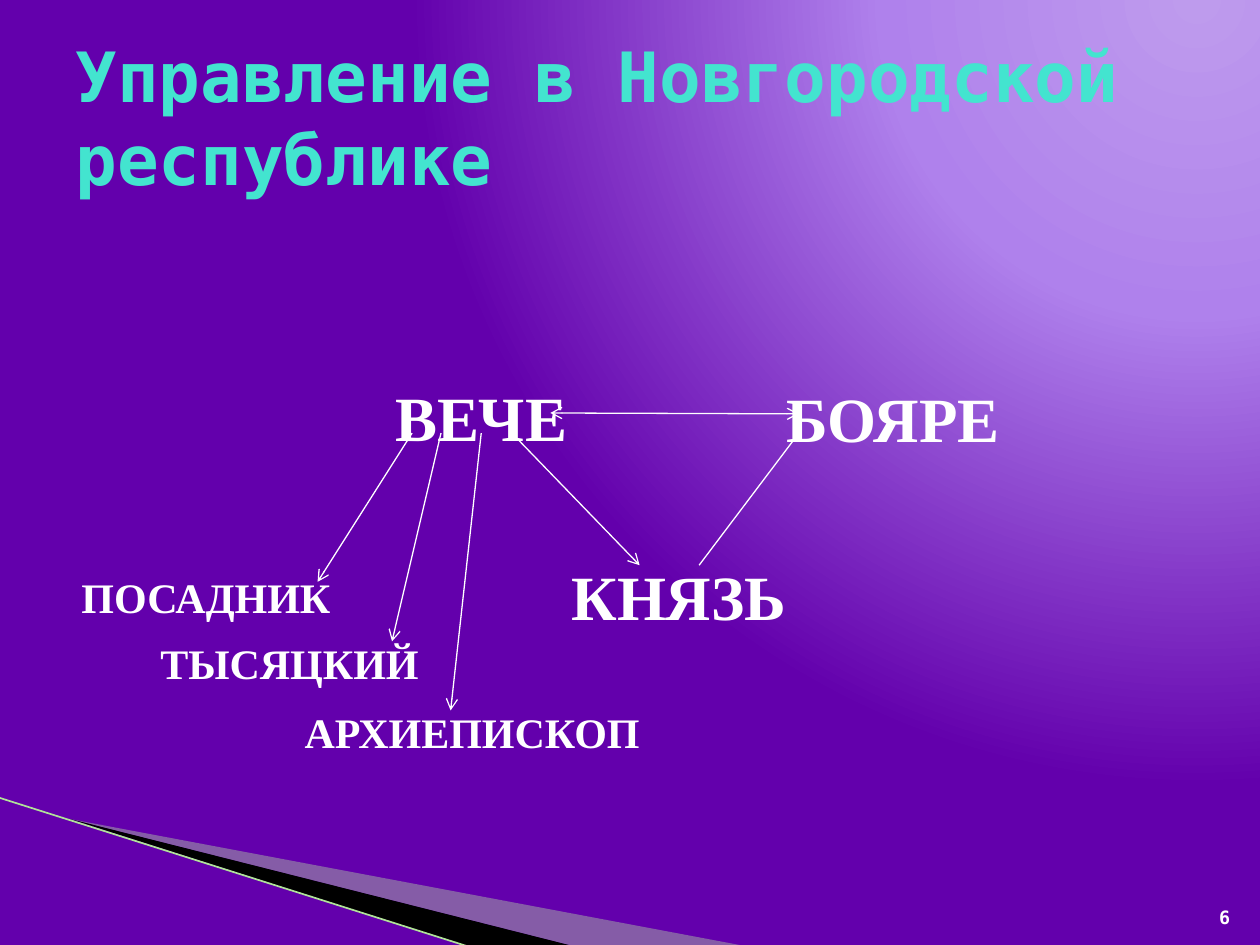
from lxml import etree
from pptx import Presentation
from pptx.dml.color import RGBColor
from pptx.enum import shapes, text
from pptx.oxml import parse_xml
from pptx.oxml.ns import nsdecls, qn
from pptx.util import Pt

MONO, SERIF = "DejaVu Sans Mono", "Times New Roman"
WHITE = "FFFFFF"
ALIGN, ANCHOR = text.PP_ALIGN, text.MSO_ANCHOR


def paint(color, code):
    color.rgb = RGBColor.from_string(code)


def label(slide, box, words, size, face=SERIF, code=WHITE,
          align=ALIGN.LEFT, anchor=ANCHOR.TOP):
    frame = slide.shapes.add_textbox(*map(Pt, box)).text_frame
    frame.word_wrap = True
    frame.vertical_anchor = anchor
    para = frame.paragraphs[0]
    para.text = words
    para.alignment = align
    font = para.font
    font.name, font.size, font.bold = face, Pt(size), True
    paint(font.color, code)


def line(slide, start, end, code=WHITE, width=0.75, tips=()):
    """Draw a straight line; tips lists the ends that bear an arrow."""
    link = slide.shapes.add_connector(
        shapes.MSO_CONNECTOR.STRAIGHT, *map(Pt, (*start, *end)))
    paint(link.line.color, code)
    link.line.width = Pt(width)
    for tip in tips:
        etree.SubElement(link.line._get_or_add_ln(), qn(f"a:{tip}"), type="arrow")
    etree.SubElement(link._element.spPr, qn("a:effectLst"))


def wedge(slide, points, code, alpha=None):
    first, *rest = [tuple(map(Pt, point)) for point in points]
    build = slide.shapes.build_freeform(*first)
    build.add_line_segments(rest, close=True)
    shape = build.convert_to_shape()
    shape.shadow.inherit = False
    shape.fill.solid()
    paint(shape.fill.fore_color, code)
    shape.line.fill.background()
    if alpha:
        tone = shape._element.spPr.find(".//" + qn("a:srgbClr"))
        etree.SubElement(tone, qn("a:alpha"), val=str(alpha * 1000))


def backdrop(slide):
    """Set a round glow that spreads from the top right."""
    fill = slide.background.fill
    fill.solid()
    props = slide._element.find(".//" + qn("p:bgPr"))
    stops = "".join(
        f'<a:gs pos="{pos * 1000}"><a:srgbClr val="{code}"/></a:gs>'
        for pos, code in ((0, "BE9BED"), (40, "AF81EC"), (100, "6300AC")))
    glow = parse_xml(
        f'<a:gradFill {nsdecls("a")} rotWithShape="1"><a:gsLst>{stops}</a:gsLst>'
        '<a:path path="circle"><a:fillToRect l="95000" t="-106000" '
        'r="5000" b="206000"/></a:path></a:gradFill>')
    props.replace(props.find(qn("a:solidFill")), glow)


def corner(slide, box):
    """Draw the slanted wedges at the lower left."""
    x, y, w, h = box
    low = y + h
    tip = (x + 40, y + 12)
    wedge(slide, [tip, (x + w, low), (x + 329, low), tip], "B8E7A1", 40)
    wedge(slide, [tip, (x + 329, low), (x + 268, low), tip], "000000")
    line(slide, (x, y), (x + 268, low), "B1E399", 0.95)


def scheme(slide, box):
    """Place the bodies of power and the links between them."""
    x, y = box[:2]
    for left, top, wide, size, align, words in (
            (156.5, 0, 158, 36, ALIGN.CENTER, "ВЕЧЕ"),
            (403, 0.5, 199, 36, ALIGN.LEFT, "БОЯРЕ"),
            (264, 102, 169, 36, ALIGN.CENTER, "КНЯЗЬ"),
            (0, 110, 174, 24, ALIGN.LEFT, "ПОСАДНИК"),
            (45, 148, 168, 24, ALIGN.LEFT, "ТЫСЯЦКИЙ"),
            (127.5, 187, 233, 24, ALIGN.LEFT, "АРХИЕПИСКОП")):
        tall = 51 if size == 36 else 36
        label(slide, (x + left, y + top, wide, tall), words, size, align=align)

    foot, tail = 34.5, ("tailEnd",)
    for start, end, tips in (
            ((275, 23), (417, 23.5), ("headEnd", "tailEnd")),
            ((253, foot), (326, 110), tail),
            ((417, foot), (360, 110), ()),
            ((196, foot), (142, 119.5), tail),
            ((212.5, foot), (184.5, 153.5), tail),
            ((235.5, foot), (218, 193), tail)):
        line(slide, (x + start[0], y + start[1]),
             (x + end[0], y + end[1]), tips=tips)


def main():
    deck = Presentation()
    deck.slide_width, deck.slide_height = Pt(720), Pt(540)
    slide = deck.slides.add_slide(deck.slide_layouts[6])
    backdrop(slide)
    corner(slide, (0, 456, 428, 85))
    # Page number and title
    label(slide, (681, 505, 29, 29), "6", 10.5, MONO,
          align=ALIGN.RIGHT, anchor=ANCHOR.BOTTOM)
    label(slide, (36, 21.6, 648, 90), "Управление в Новгородской республике",
          39.6, MONO, "43E4CF", anchor=ANCHOR.MIDDLE)
    scheme(slide, (39.5, 213, 602, 223))
    deck.save("out.pptx")


if __name__ == "__main__":
    main()
